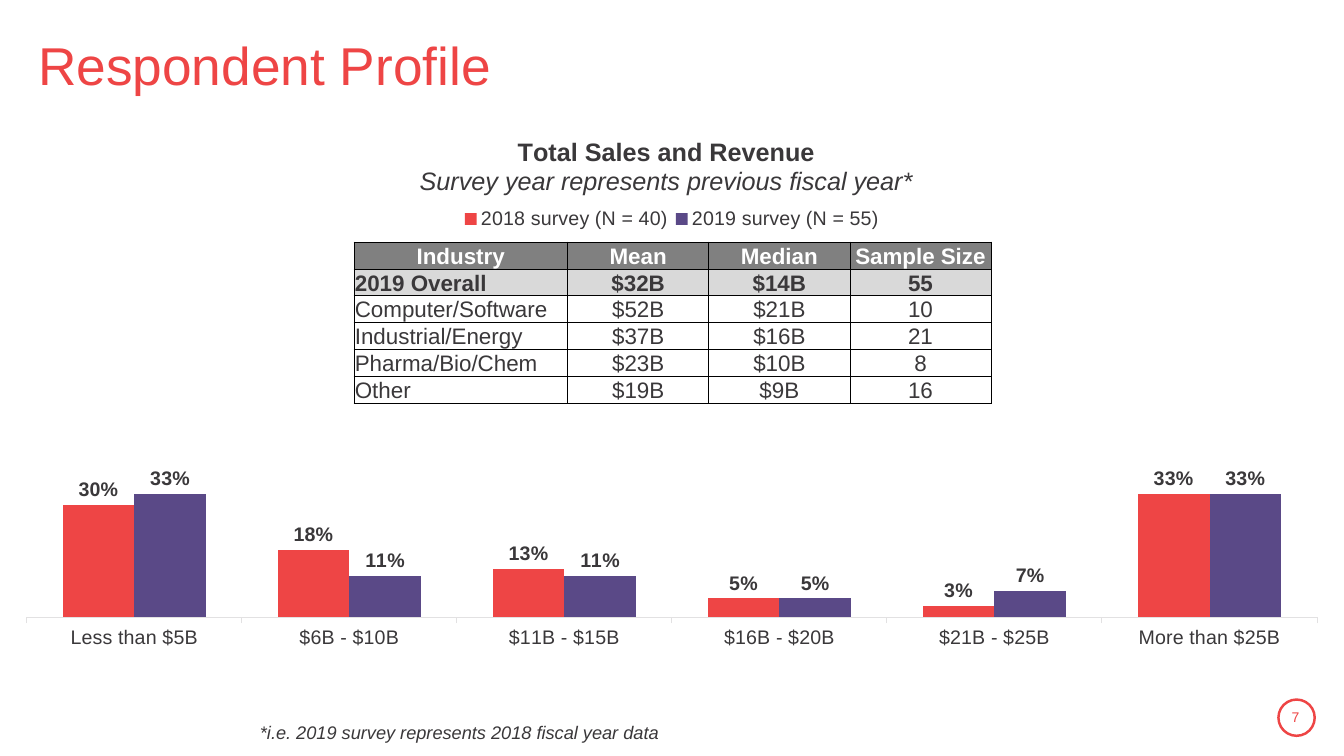
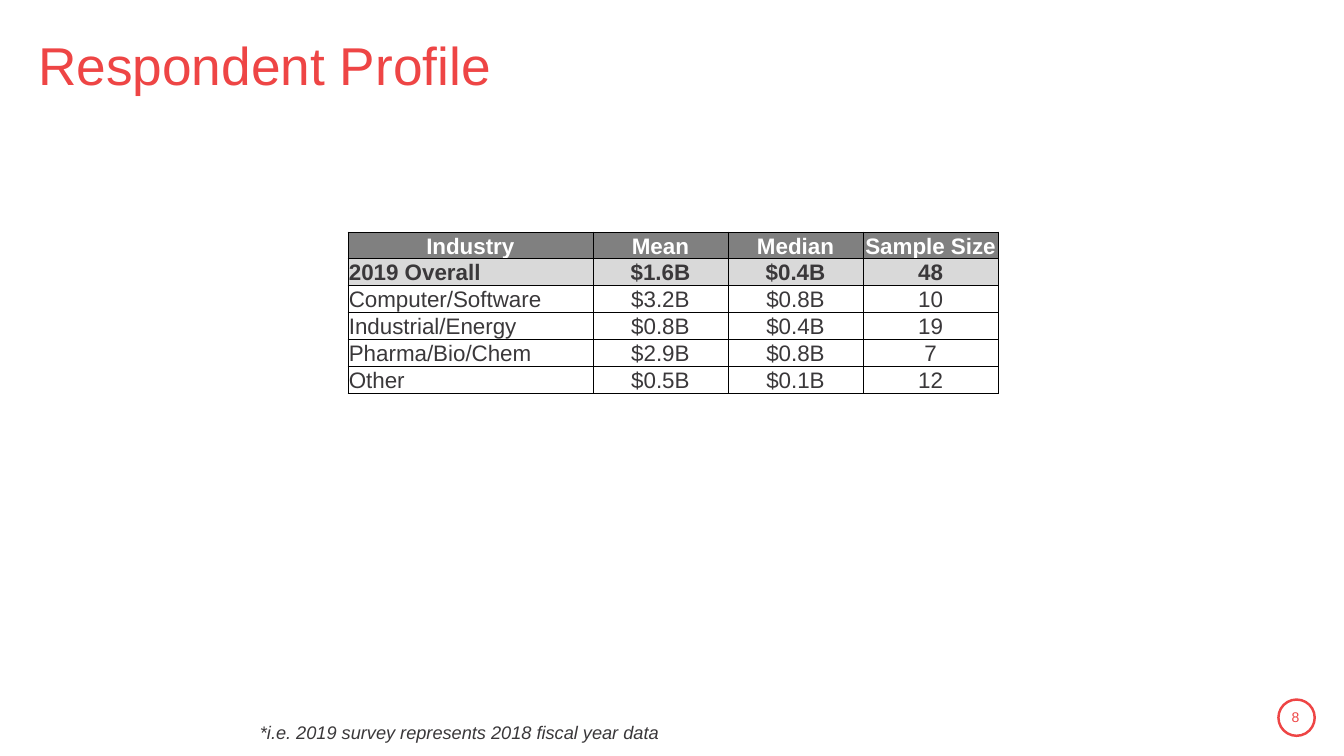
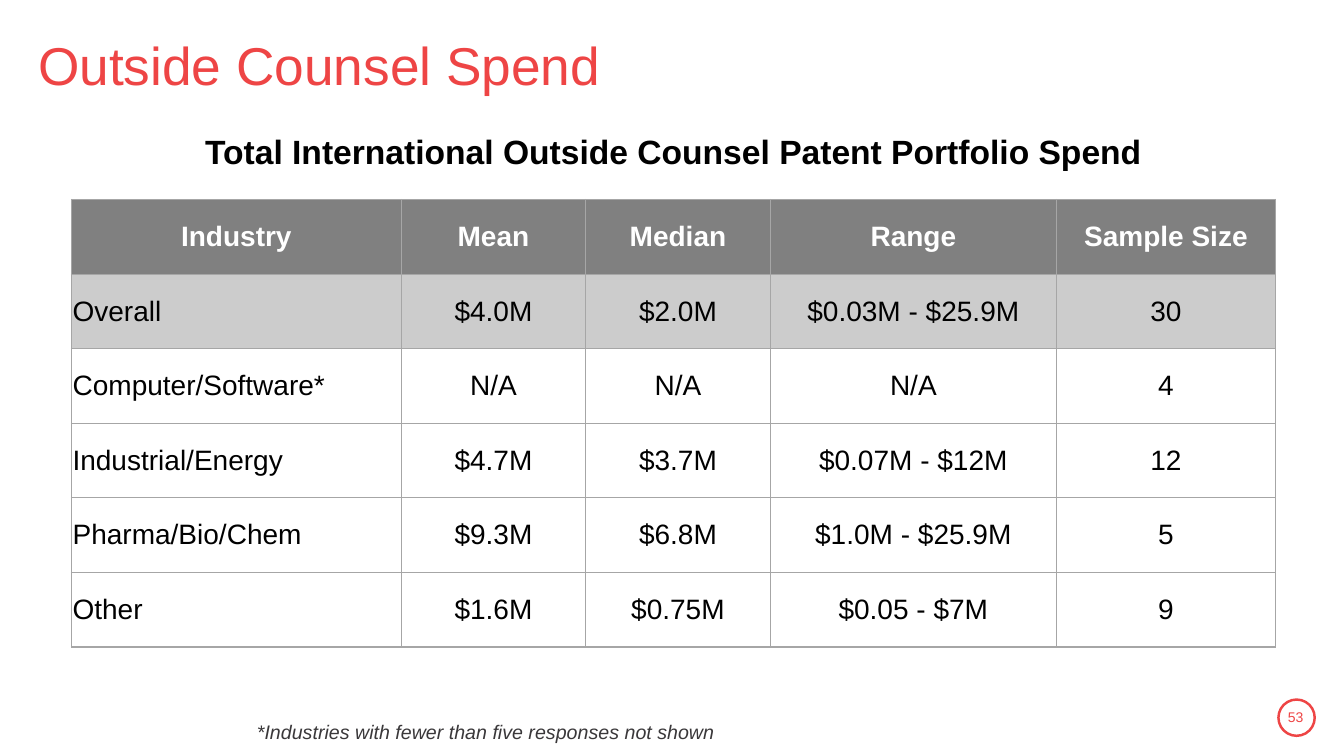
"""Build three survey slides: a revenue chart with its table, and two tables."""
from dataclasses import dataclass

from lxml import etree
from pptx import Presentation
from pptx.chart.chart import Chart
from pptx.chart.data import CategoryChartData
from pptx.dml.color import RGBColor
from pptx.enum.chart import XL_CHART_TYPE, XL_LABEL_POSITION, XL_LEGEND_POSITION, XL_TICK_MARK
from pptx.enum.shapes import MSO_SHAPE
from pptx.enum.text import MSO_ANCHOR, PP_ALIGN
from pptx.oxml.ns import qn
from pptx.presentation import Presentation as Deck
from pptx.slide import Slide
from pptx.table import _Cell
from pptx.util import Inches, Pt

RED = RGBColor(0xEE, 0x45, 0x45)
PURPLE = RGBColor(0x5A, 0x49, 0x87)
INK = RGBColor(0x3A, 0x38, 0x3A)
BLACK = RGBColor(0, 0, 0)
WHITE = RGBColor(0xFF, 0xFF, 0xFF)
HEADER_GRAY = RGBColor(0x80, 0x80, 0x80)
LIGHT_GRAY = RGBColor(0xD9, 0xD9, 0xD9)
MID_GRAY = RGBColor(0xCC, 0xCC, 0xCC)
BORDER_GRAY = RGBColor(0xA6, 0xA6, 0xA6)
AXIS_GRAY = RGBColor(0xE2, 0xE1, 0xE2)
FONT = "Arial"
FISCAL_NOTE = "*i.e. 2019 survey represents 2018 fiscal year data"


@dataclass(frozen=True)
class TextStyle:
    size: int
    color: RGBColor
    bold: bool = False
    italic: bool = False


@dataclass(frozen=True)
class TextSpec:
    text: str
    box: tuple[float, float, float, float]
    style: TextStyle
    align: PP_ALIGN = PP_ALIGN.LEFT
    anchor: MSO_ANCHOR = MSO_ANCHOR.TOP
    line_spacing: float = 1.0


@dataclass(frozen=True)
class TableLook:
    size: int
    color: RGBColor
    anchor: MSO_ANCHOR
    border: RGBColor
    border_width: float
    overall_fill: RGBColor
    overall_bold: bool
    row_height: float


@dataclass(frozen=True)
class TableSpec:
    left: float
    top: float
    cols: tuple[float, ...]
    rows: tuple[tuple[str, ...], ...]
    look: TableLook


COMPACT = TableLook(16, INK, MSO_ANCHOR.BOTTOM, BLACK, 0.5, LIGHT_GRAY, True, 0.26)
LARGE = TableLook(20, BLACK, MSO_ANCHOR.MIDDLE, BORDER_GRAY, 1, MID_GRAY, False, 0.74)

REVENUE = TableSpec(3.51, 2.4, (2.12, 1.4, 1.4, 1.4), (
    ("Industry", "Mean", "Median", "Sample Size"),
    ("2019 Overall", "$32B", "$14B", "55"),
    ("Computer/Software", "$52B", "$21B", "10"),
    ("Industrial/Energy", "$37B", "$16B", "21"),
    ("Pharma/Bio/Chem", "$23B", "$10B", "8"),
    ("Other", "$19B", "$9B", "16"),
), COMPACT)
SMALLER_FIGURES = TableSpec(3.45, 2.3, (2.43, 1.34, 1.34, 1.34), (
    ("Industry", "Mean", "Median", "Sample Size"),
    ("2019 Overall", "$1.6B", "$0.4B", "48"),
    ("Computer/Software", "$3.2B", "$0.8B", "10"),
    ("Industrial/Energy", "$0.8B", "$0.4B", "19"),
    ("Pharma/Bio/Chem", "$2.9B", "$0.8B", "7"),
    ("Other", "$0.5B", "$0.1B", "12"),
), COMPACT)
COUNSEL_SPEND = TableSpec(0.71, 1.98, (3.27, 1.83, 1.83, 2.84, 2.17), (
    ("Industry", "Mean", "Median", "Range", "Sample Size"),
    ("Overall", "$4.0M", "$2.0M", "$0.03M - $25.9M", "30"),
    ("Computer/Software*", "N/A", "N/A", "N/A", "4"),
    ("Industrial/Energy", "$4.7M", "$3.7M", "$0.07M - $12M", "12"),
    ("Pharma/Bio/Chem", "$9.3M", "$6.8M", "$1.0M - $25.9M", "5"),
    ("Other", "$1.6M", "$0.75M", "$0.05 - $7M", "9"),
), LARGE)

BRACKETS = ("Less than $5B", "$6B - $10B", "$11B - $15B",
            "$16B - $20B", "$21B - $25B", "More than $25B")
SURVEYS = (
    ("2018 survey (N = 40)", (0.3, 0.18, 0.13, 0.05, 0.03, 0.33), RED),
    ("2019 survey (N = 55)", (0.33, 0.11, 0.11, 0.05, 0.07, 0.33), PURPLE),
)
CHART_HEADING = (
    ("Total Sales and Revenue", TextStyle(18, INK, bold=True)),
    ("Survey year represents previous fiscal year*", TextStyle(18, INK, italic=True)),
)
CHART_LAYOUT = {
    "title": {"x": 0.31, "y": 0.04},
    "plotArea": {"x": 0.02, "y": 0.24, "w": 0.96, "h": 0.68},
    "legend": {"x": 0.34, "y": 0.17, "w": 0.32, "h": 0.05},
}


def set_font(font, style: TextStyle) -> None:
    """Apply a text style to a font."""
    values = {"name": FONT, "size": Pt(style.size), "bold": style.bold, "italic": style.italic}
    for name, value in values.items():
        setattr(font, name, value)
    font.color.rgb = style.color


def add_text(s: Slide, spec: TextSpec) -> None:
    """Add a one-paragraph text box."""
    tf = s.shapes.add_textbox(*map(Inches, spec.box)).text_frame
    tf.word_wrap = True
    tf.vertical_anchor = spec.anchor
    p = tf.paragraphs[0]
    p.alignment = spec.align
    p.line_spacing = spec.line_spacing
    r = p.add_run()
    r.text = spec.text
    set_font(r.font, spec.style)


def add_footnote(s: Slide, text: str, left: float, top: float, size: int) -> None:
    """Add the italic note at the foot of a slide."""
    add_text(s, TextSpec(text, (left, top, 7.2, 0.33), TextStyle(size, INK, italic=True)))


def add_frame(prs: Deck, title: str, number: int) -> Slide:
    """Add a slide with the shared title and page-number badge."""
    s = prs.slides.add_slide(prs.slide_layouts[6])
    badge = s.shapes.add_shape(MSO_SHAPE.OVAL, *map(Inches, (12.68, 6.94, 0.36, 0.36)))
    badge.shadow.inherit = False
    badge.fill.background()
    badge.line.color.rgb = RED
    badge.line.width = Pt(1.75)
    add_text(s, TextSpec(title, (0.28, 0.24, 12.82, 0.87), TextStyle(38, RED),
                         anchor=MSO_ANCHOR.MIDDLE, line_spacing=0.9))
    add_text(s, TextSpec(str(number), (12.62, 6.91, 0.46, 0.4), TextStyle(10, RED),
                         PP_ALIGN.CENTER, MSO_ANCHOR.MIDDLE))
    return s


def set_borders(cell: _Cell, color: RGBColor, width: float) -> None:
    """Draw all four sides of a cell."""
    pr = cell._tc.get_or_add_tcPr()
    for side in "LRTB":
        ln = etree.SubElement(pr, qn(f"a:ln{side}"), w=str(Pt(width)))
        fill = etree.SubElement(ln, qn("a:solidFill"))
        etree.SubElement(fill, qn("a:srgbClr"), val=str(color))


def add_table(s: Slide, spec: TableSpec) -> None:
    """Add a table with a header row, an overall row and plain rows."""
    look = spec.look
    table = s.shapes.add_table(
        len(spec.rows), len(spec.cols), Inches(spec.left), Inches(spec.top),
        Inches(sum(spec.cols)), Inches(look.row_height * len(spec.rows))).table
    table.first_row = table.horz_banding = False
    for column, width in zip(table.columns, spec.cols):
        column.width = Inches(width)
    styles = {0: (HEADER_GRAY, TextStyle(look.size, WHITE, bold=True)),
              1: (look.overall_fill, TextStyle(look.size, look.color, look.overall_bold))}
    plain = (None, TextStyle(look.size, look.color))
    cell_format = {"margin_left": Inches(0.01), "margin_right": Inches(0.01),
                   "margin_top": 0, "margin_bottom": 0, "vertical_anchor": look.anchor}
    for i, row in enumerate(spec.rows):
        table.rows[i].height = Inches(look.row_height)
        fill, style = styles.get(i, plain)
        for j, text in enumerate(row):
            cell = table.cell(i, j)
            for name, value in cell_format.items():
                setattr(cell, name, value)
            set_borders(cell, look.border, look.border_width)
            if fill is None:
                cell.fill.background()
            else:
                cell.fill.solid()
                cell.fill.fore_color.rgb = fill
            p = cell.text_frame.paragraphs[0]
            p.alignment = PP_ALIGN.LEFT if i and not j else PP_ALIGN.CENTER
            r = p.add_run()
            r.text = text
            set_font(r.font, style)


def place_chart_parts(chart: Chart) -> None:
    """Fix the place of the chart's title, plot area and legend."""
    for tag, values in CHART_LAYOUT.items():
        parent = chart.element.xpath(f".//c:{tag}")[0]
        for old in parent.findall(qn("c:layout")):
            parent.remove(old)
        layout = etree.Element(qn("c:layout"))
        manual = etree.SubElement(layout, qn("c:manualLayout"))
        if tag == "plotArea":
            etree.SubElement(manual, qn("c:layoutTarget"), val="inner")
        for key in "xy":
            etree.SubElement(manual, qn(f"c:{key}Mode"), val="edge")
        for key, value in values.items():
            etree.SubElement(manual, qn(f"c:{key}"), val=str(value))
        parent.insert(0 if tag == "plotArea" else 1, layout)


def add_revenue_chart(s: Slide) -> None:
    """Add the clustered columns of revenue brackets by survey year."""
    data = CategoryChartData(number_format="0%")
    data.categories = BRACKETS
    for name, values, _ in SURVEYS:
        data.add_series(name, values)
    chart = s.shapes.add_chart(XL_CHART_TYPE.COLUMN_CLUSTERED,
                               *map(Inches, (0, 1.11, 13.33, 5.45)), data).chart
    set_font(chart.font, TextStyle(14, INK))

    chart.has_title = True
    tf = chart.chart_title.text_frame
    for i, (text, style) in enumerate(CHART_HEADING):
        p = tf.add_paragraph() if i else tf.paragraphs[0]
        p.alignment = PP_ALIGN.CENTER
        r = p.add_run()
        r.text = text
        set_font(r.font, style)

    chart.has_legend = True
    chart.legend.position = XL_LEGEND_POSITION.TOP
    chart.legend.include_in_layout = False
    set_font(chart.legend.font, TextStyle(14, INK))

    axis = chart.category_axis
    axis.major_tick_mark = XL_TICK_MARK.OUTSIDE
    axis.format.line.color.rgb = AXIS_GRAY
    axis.format.line.width = Pt(0.75)
    set_font(axis.tick_labels.font, TextStyle(14, INK))
    scale = {"minimum_scale": 0, "maximum_scale": 1, "major_unit": 0.2,
             "has_major_gridlines": False, "visible": False}
    for name, value in scale.items():
        setattr(chart.value_axis, name, value)

    plot = chart.plots[0]
    plot.vary_by_categories = False
    plot.gap_width = 100
    plot.overlap = 0
    label_format = {"show_value": True, "number_format": "0%", "number_format_is_linked": False,
                    "position": XL_LABEL_POSITION.OUTSIDE_END}
    for series, (_, _, color) in zip(plot.series, SURVEYS):
        series.format.fill.solid()
        series.format.fill.fore_color.rgb = color
        for name, value in label_format.items():
            setattr(series.data_labels, name, value)
        set_font(series.data_labels.font, TextStyle(14, INK, bold=True))
    place_chart_parts(chart)


def main() -> None:
    """Build and save the slides."""
    prs = Presentation()
    prs.slide_width, prs.slide_height = Inches(13.33), Inches(7.5)

    s = add_frame(prs, "Respondent Profile", 7)
    add_revenue_chart(s)
    add_table(s, REVENUE)
    add_footnote(s, FISCAL_NOTE, 2.48, 7.11, 13)

    s = add_frame(prs, "Respondent Profile", 8)
    add_table(s, SMALLER_FIGURES)
    add_footnote(s, FISCAL_NOTE, 2.48, 7.11, 13)

    s = add_frame(prs, "Outside Counsel Spend", 53)
    add_text(s, TextSpec("Total International Outside Counsel Patent Portfolio Spend",
                         (0.75, 1.25, 11.86, 0.5), TextStyle(24, BLACK, bold=True),
                         PP_ALIGN.CENTER))
    add_table(s, COUNSEL_SPEND)
    add_footnote(s, "*Industries with fewer than five responses not shown", 2.45, 7.09, 14)

    prs.save("out.pptx")


if __name__ == "__main__":
    main()
